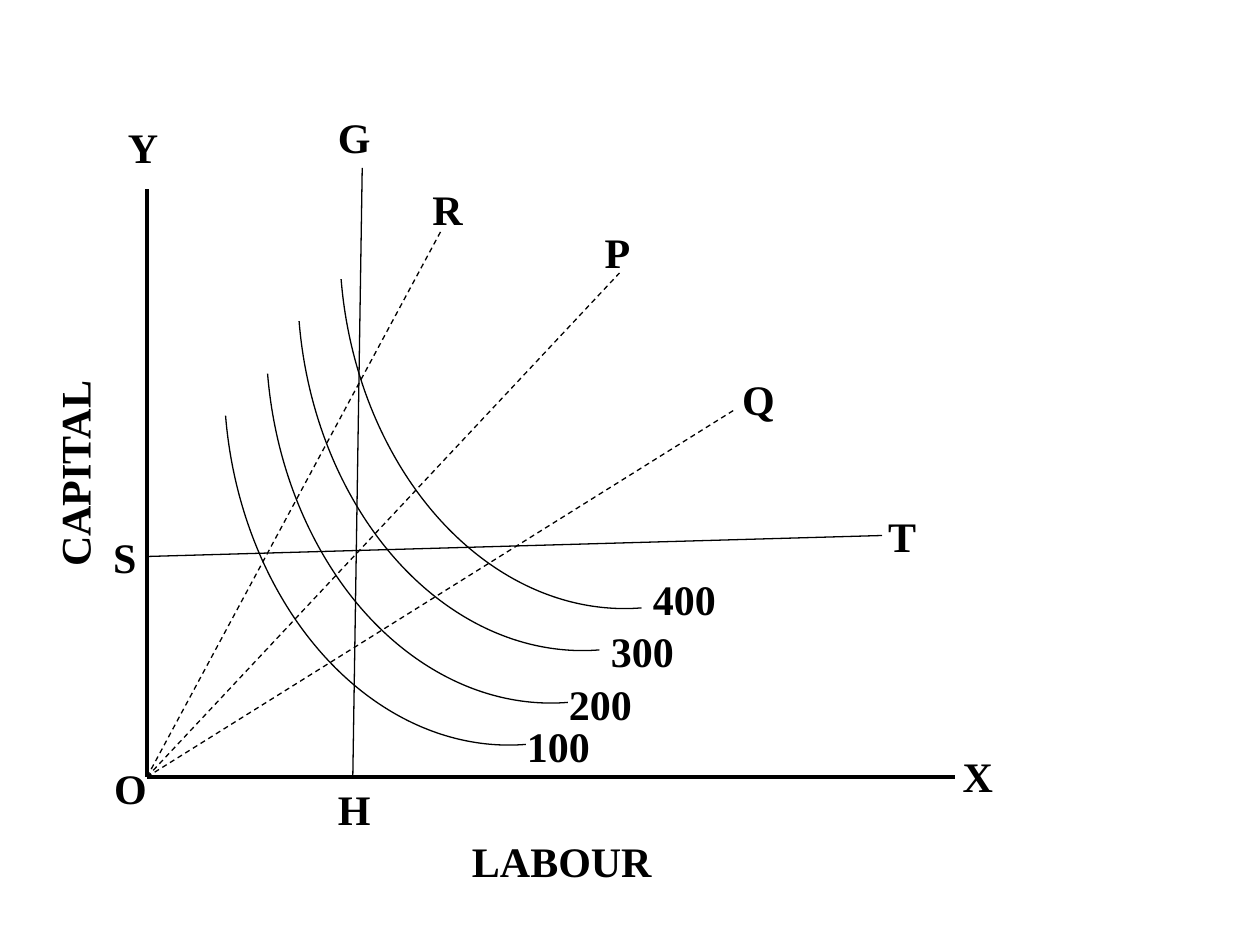
from lxml import etree
from pptx import Presentation
from pptx import util as u
from pptx.dml.color import RGBColor
from pptx.enum import dml, shapes, text
from pptx.oxml.ns import qn

PIXELS_PER_INCH = 120
LABEL_HEIGHT = 60
LABEL_FORMAT = {"name": "Times New Roman", "size": u.Pt(24), "bold": True}
AXIS = {"width": u.Pt(2.25)}
THIN = {"width": u.Pt(0.75)}
RAY = {"width": u.Pt(0.75), "dash_style": dml.MSO_LINE.DASH}


def px(length):
    return u.Emu(length * u.Inches(1) // PIXELS_PER_INCH)


def color(value):
    return RGBColor.from_string(value)


def apply_format(target, values):
    for name, value in values.items():
        setattr(target, name, value)


def style_line(line, values):
    line.color.rgb = color("000000")
    apply_format(line, values)


def add_line(slide, box, start, end, values):
    left, top = box[:2]
    points = (left + start[0], top + start[1], left + end[0], top + end[1])
    connector = slide.shapes.add_connector(
        shapes.MSO_CONNECTOR.STRAIGHT, *map(px, points))
    style_line(connector.line, values)
    etree.SubElement(connector._element.spPr, qn("a:effectLst"))


def add_label(slide, box, wording, x, y, width, rotation=0,
              alignment=text.PP_ALIGN.LEFT):
    label = slide.shapes.add_textbox(
        px(box[0] + x), px(box[1] + y), px(width), px(LABEL_HEIGHT))
    label.rotation = rotation
    label.text_frame.word_wrap = True
    paragraph = label.text_frame.paragraphs[0]
    paragraph.alignment = alignment
    run = paragraph.add_run()
    run.text = wording
    run.font.color.rgb = color("000000")
    apply_format(run.font, LABEL_FORMAT)


def draw_axes(slide, box):
    width, height = box[2:]
    origin = (0, height)
    add_line(slide, box, (0, 0), origin, AXIS)
    add_line(slide, box, origin, (width, height), AXIS)
    add_label(slide, box, "Y", -30, -70, 61)
    add_label(slide, box, "X", width - 5, height - 31, 54)
    add_label(slide, box, "O", -43, height - 20, 64)
    add_label(slide, box, "LABOUR", 230, height + 50, 330,
              alignment=text.PP_ALIGN.CENTER)
    add_label(slide, box, "CAPITAL", -171, 240, 203, rotation=270)


def draw_rays(slide, box):
    rays = [("R", (280, 40), (260, -11), 55),
            ("P", (450, 80), (424, 30), 50),
            ("Q", (560, 210), (555, 170), 55)]
    for name, end, place, width in rays:
        add_line(slide, box, (0, box[3]), end, RAY)
        add_label(slide, box, name, *place, width)


def draw_isoquants(slide, box):
    isoquants = [("100", (74, -140), (350, 500)),
                 ("200", (114, -180), (390, 460)),
                 ("300", (144, -230), (430, 410)),
                 ("400", (184, -270), (470, 360))]
    for output, (x, y), place in isoquants:
        arc = slide.shapes.add_shape(
            shapes.MSO_SHAPE.ARC, px(box[0] + x), px(box[1] + y), px(520), px(670))
        arc.rotation = 175.4
        arc.shadow.inherit = False
        arc.fill.background()
        style_line(arc.line, THIN)
        add_label(slide, box, output, *place, 86)


def draw_fixed_input_lines(slide, box):
    add_line(slide, box, (0, 350), (700, 330), THIN)
    add_line(slide, box, (196, box[3]), (205, -20), THIN)
    for name, x, y, width in [("S", -44, 320, 54), ("T", 694, 300, 52),
                              ("G", 170, -80, 55), ("H", 170, box[3], 55)]:
        add_label(slide, box, name, x, y, width)


def main():
    presentation = Presentation()
    apply_format(presentation, {"slide_width": px(1200), "slide_height": px(900)})
    slide = presentation.slides.add_slide(presentation.slide_layouts[6])
    plot = (140, 180, 770, 560)
    for draw in (draw_axes, draw_rays, draw_isoquants, draw_fixed_input_lines):
        draw(slide, plot)
    presentation.save("out.pptx")


if __name__ == "__main__":
    main()
